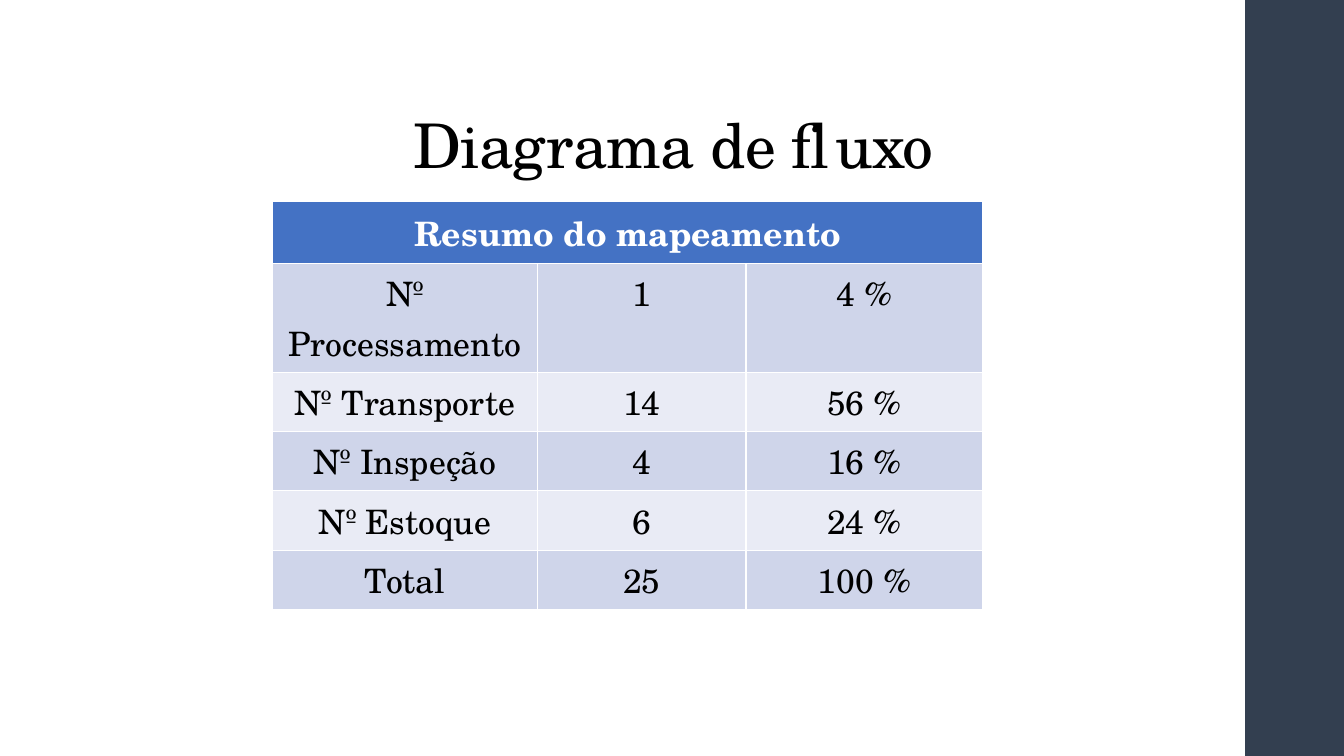
from pptx import Presentation
from pptx.dml.color import RGBColor
from pptx.enum.shapes import MSO_SHAPE
from pptx.enum.text import MSO_ANCHOR, PP_ALIGN
from pptx.util import Inches, Pt

FONT = "TeX Gyre Schola"
HEADER = "Resumo do mapeamento"
ROWS = [
    ("Nº Processamento", "1", "4 %"),
    ("Nº Transporte", "14", "56 %"),
    ("Nº Inspeção", "4", "16 %"),
    ("Nº Estoque", "6", "24 %"),
    ("Total", "25", "100 %"),
]
COL_WIDTHS = (2.63, 2.07, 2.35)
ROW_HEIGHT = 0.41
BANDS = ("CFD5EA", "E9EBF5")


def rgb(color):
    return RGBColor.from_string(color)


def add_text(tf, text, size, color="000000", bold=False):
    p = tf.paragraphs[0]
    p.alignment = PP_ALIGN.CENTER
    r = p.add_run()
    r.text = text
    r.font.name = FONT
    r.font.size = Pt(size)
    r.font.bold = bold
    r.font.color.rgb = rgb(color)
    return p, r


def add_side_bar(s):
    sp = s.shapes.add_shape(
        MSO_SHAPE.RECTANGLE, Inches(12.35), 0, Inches(1), Inches(7.5)
    )
    sp.shadow.inherit = False
    sp.fill.solid()
    sp.fill.fore_color.rgb = rgb("333F50")
    sp.line.fill.background()


def set_title(s, text):
    sp = s.shapes.title
    sp.left, sp.top = Inches(1.38), Inches(0.4)
    sp.width, sp.height = Inches(10.6), Inches(1.45)
    tf = sp.text_frame
    tf.word_wrap = True
    tf.vertical_anchor = MSO_ANCHOR.BOTTOM
    p, r = add_text(tf, text, 44)
    p.line_spacing = 0.9
    r.font._element.set("spc", "-50")


def fill_cell(cell, text, fill, color="000000", bold=False):
    cell.fill.solid()
    cell.fill.fore_color.rgb = rgb(fill)
    cell.margin_left = cell.margin_right = Inches(0.08)
    cell.margin_top = cell.margin_bottom = Inches(0.05)
    add_text(cell.text_frame, text, 24, color, bold)


def add_summary_table(s):
    n_rows = len(ROWS) + 1
    table = s.shapes.add_table(
        n_rows, len(COL_WIDTHS), Inches(2.7), Inches(2),
        Inches(sum(COL_WIDTHS)), Inches(ROW_HEIGHT * n_rows),
    ).table
    for col, width in zip(table.columns, COL_WIDTHS):
        col.width = Inches(width)
    table.cell(0, 0).merge(table.cell(0, len(COL_WIDTHS) - 1))
    fill_cell(table.cell(0, 0), HEADER, "4472C4", "FFFFFF", True)
    for i, row in enumerate(ROWS):
        for j, text in enumerate(row):
            fill_cell(table.cell(i + 1, j), text, BANDS[i % 2])


def main():
    prs = Presentation()
    prs.slide_width, prs.slide_height = Inches(13.33), Inches(7.5)
    s = prs.slides.add_slide(prs.slide_layouts[5])
    add_side_bar(s)
    set_title(s, "Diagrama de fluxo")
    add_summary_table(s)
    prs.save("out.pptx")


if __name__ == "__main__":
    main()
